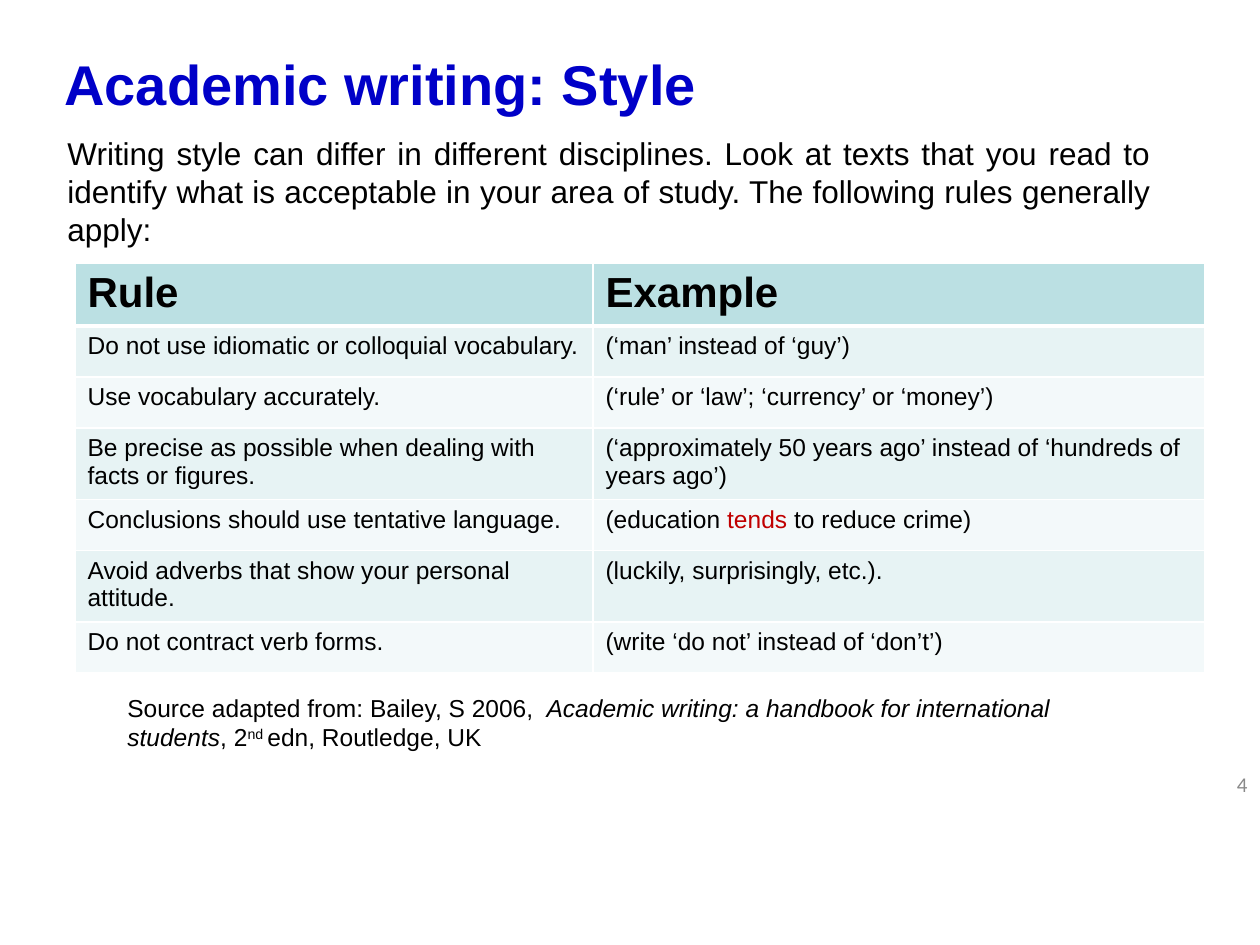
from lxml import etree
from pptx import Presentation
from pptx import util as u
from pptx.dml.color import RGBColor
from pptx.enum import text
from pptx.oxml.ns import qn

PX = u.Inches(1) // 126
COLORS = {
    "title": "0000C8", "ink": "000000", "accent": "C00000", "number": "898989",
    "header": "BBE0E3", "odd": "E7F3F4", "even": "F3F9FA", "border": "FFFFFF",
}
RULES = [
    ("Do not use idiomatic or colloquial vocabulary.", "(‘man’ instead of ‘guy’)"),
    ("Use vocabulary accurately.", "(‘rule’ or ‘law’; ‘currency’ or ‘money’)"),
    ("Be precise as possible when dealing with facts or figures.",
     "(‘approximately 50 years ago’ instead of ‘hundreds of years ago’)"),
    ("Conclusions should use tentative language.",
     [("(education ", {}), ("tends ", {"color": "accent"}), ("to reduce crime)", {})]),
    ("Avoid adverbs that show your personal attitude.", "(luckily, surprisingly, etc.)."),
    ("Do not contract verb forms.", "(write ‘do not’ instead of ‘don’t’)"),
]


def format_run(run, size=14, font="Arial", color="ink", bold=False, italic=False, raised=False):
    """Set the character format of one run."""
    run.font.size = u.Pt(size)
    run.font.name = font
    run.font.bold = bold
    run.font.italic = italic
    run.font.color.rgb = RGBColor.from_string(COLORS[color])
    if raised:
        run.font._element.set("baseline", "30000")


def write(frame, content, align=text.PP_ALIGN.LEFT, **style):
    """Write a string, or a list of (string, format) pairs, as one paragraph."""
    paragraph = frame.paragraphs[0]
    paragraph.alignment = align
    pieces = [(content, {})] if isinstance(content, str) else content
    for words, changes in pieces:
        run = paragraph.add_run()
        run.text = words
        format_run(run, **{**style, **changes})


def add_text(slide, box, content, inset=6, anchor=text.MSO_ANCHOR.TOP, **style):
    """Place a wrapping text box at the given box."""
    frame = slide.shapes.add_textbox(*(n * PX for n in box)).text_frame
    frame.word_wrap = True
    frame.margin_top = inset * PX
    frame.vertical_anchor = anchor
    write(frame, content, **style)


def add_borders(cell, **widths):
    """Draw the cell borders, one width in points per side."""
    properties = cell._tc.get_or_add_tcPr()
    for side in "LRTB":
        line = etree.SubElement(properties, qn(f"a:ln{side}"), w=str(u.Pt(widths.get(side, 1))))
        fill = etree.SubElement(line, qn("a:solidFill"))
        etree.SubElement(fill, qn("a:srgbClr"), val=COLORS["border"])


def add_rules_table(slide, box, column_widths, rows):
    """Place the table of rules and examples."""
    table = slide.shapes.add_table(len(rows) + 1, 2, *(n * PX for n in box)).table
    table.first_row = table.horz_banding = False
    for column, width in zip(table.columns, column_widths):
        column.width = width * PX
    for index, contents in enumerate([("Rule", "Example"), *rows]):
        table.rows[index].height = 51 * PX
        header = index == 0
        fill = "header" if header else ("even", "odd")[index % 2]
        for cell, content in zip(table.rows[index].cells, contents):
            add_borders(cell, B=3 if header else 1, T=3 if index == 1 else 1)
            cell.fill.solid()
            cell.fill.fore_color.rgb = RGBColor.from_string(COLORS[fill])
            write(cell.text_frame, content, size=24 if header else 14, bold=header)


def add_source(slide, box):
    """Place the citation below the table."""
    add_text(slide, box, [
        ("Source adapted from: Bailey, S 2006, ", {}),
        (" Academic writing: a handbook for international students", {"italic": True}),
        (", 2", {}),
        ("nd ", {"raised": True}),
        ("edn, Routledge, UK", {}),
    ])


def main():
    """Build and save the slide."""
    presentation = Presentation()
    presentation.slide_width, presentation.slide_height = u.Inches(10), u.Inches(7.5)
    slide = presentation.slides.add_slide(presentation.slide_layouts[6])
    add_text(slide, (52, 38, 1155, 89), "Academic writing: Style",
             inset=12, size=32, color="title", bold=True)
    add_text(slide, (966, 759, 294, 50), "4", anchor=text.MSO_ANCHOR.MIDDLE,
             align=text.PP_ALIGN.RIGHT, size=12, font="Calibri", color="number")
    add_text(slide, (55, 125, 1108, 127),
             "Writing style can differ in different disciplines. Look at texts that you read to "
             "identify what is acceptable in your area of study. The following rules generally apply:",
             inset=9, align=text.PP_ALIGN.JUSTIFY, size=18)
    add_rules_table(slide, (75, 263, 1130, 357), (518, 612), RULES)
    add_source(slide, (115, 687, 1022, 72))
    presentation.save("out.pptx")


if __name__ == "__main__":
    main()
